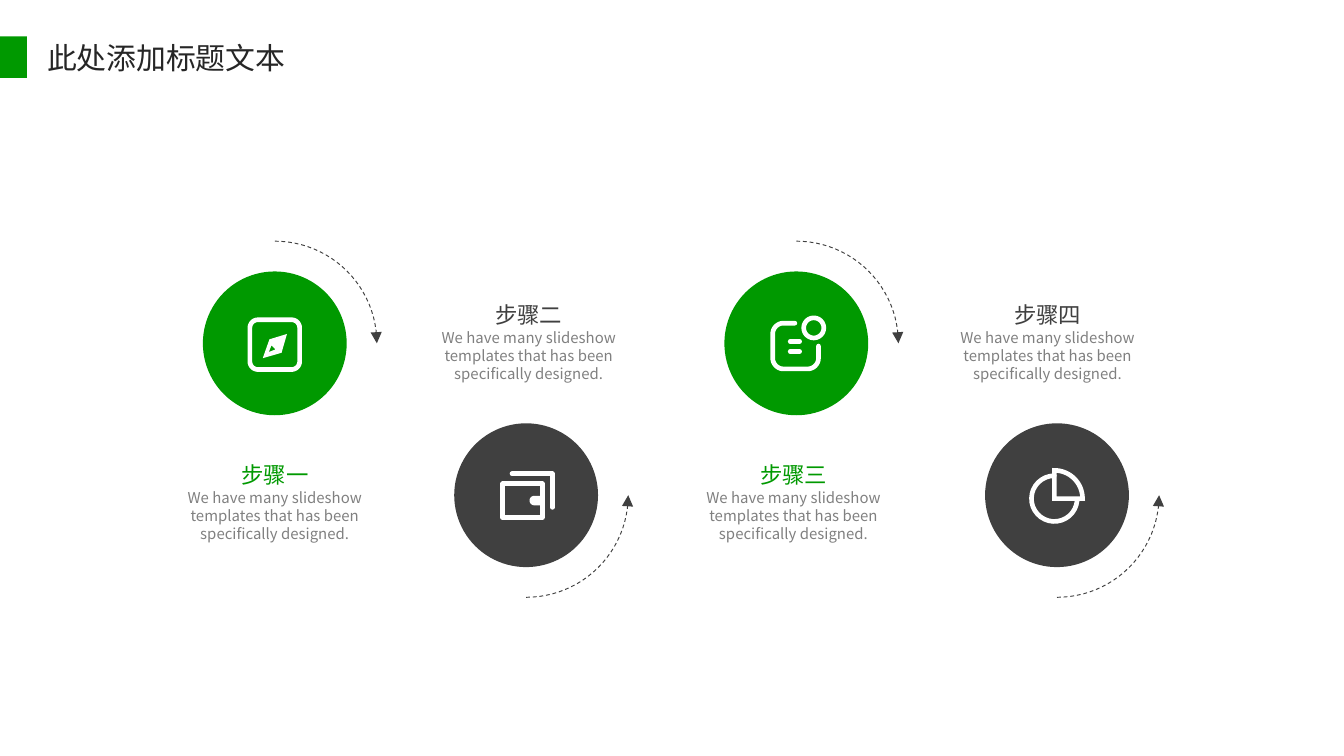
from math import cos, radians, sin

from pptx import Presentation
from pptx.dml.color import RGBColor
from pptx.enum.dml import MSO_LINE
from pptx.enum.shapes import MSO_SHAPE
from pptx.enum.text import MSO_ANCHOR, PP_ALIGN
from pptx.oxml.ns import qn
from pptx.util import Inches, Pt
from lxml.etree import SubElement

GREEN = RGBColor(0x00, 0x99, 0x00)
DARK = RGBColor(0x40, 0x40, 0x40)
GRAY = RGBColor(0x80, 0x80, 0x80)
INK = RGBColor(0x26, 0x26, 0x26)
WHITE = RGBColor(0xFF, 0xFF, 0xFF)
FONT = "Noto Sans CJK SC"


def arc(cx, cy, radius, start, end, steps=24):
    """Points along an arc; degrees run clockwise from the right."""
    angles = [radians(start + (end - start) * i / steps) for i in range(steps + 1)]
    return [(cx + radius * cos(a), cy + radius * sin(a)) for a in angles]


# Content
TITLE = "此处添加标题文本"
BODY = "We have many slideshow templates that has been specifically designed."

# Icon parts: (style, contours) in hundredths of an inch from the circle centre
COMPASS = [
    ("solid", [[(9, -7), (-4, -3), (-9, 11), (5, 7)],
               [(-4.5, 6.5), (-2.5, 1.5), (0.5, 4.5)]]),
    ("loop", [arc(-12.5, -11.5, 6, 180, 270) + arc(12.5, -11.5, 6, 270, 360)
              + arc(12.5, 13.5, 6, 0, 90) + arc(-12.5, 13.5, 6, 90, 180)]),
]
WALLET = [
    ("loop", [[(-17.5, -8.5), (12, -8.5), (12, 16.5), (-17.5, 16.5)]]),
    ("solid", [arc(6, 4, 3.5, 90, 270) + [(12, 0.5), (12, 7.5)]]),
    ("stroke", [[(-10.5, -16), (19.5, -16), (19.5, 9)]]),
]
NOTE = [
    ("stroke", [[(-1, -15)] + arc(-9.5, -7, 8, 270, 180) + arc(-9.5, 11, 8, 180, 90)
                + arc(8.5, 11, 8, 90, 0) + [(16.5, 2)]]),
    ("loop", [arc(13, -11.5, 7.5, 0, 360)]),
    ("stroke", [[(-4.5, -1.5), (2.5, -1.5)], [(-4.5, 6), (2.5, 6)]]),
]
PIE = [
    ("stroke", [arc(-2, 2.5, 17, 5, 270)]),
    ("sharp", [[(-2, 2.5)] + arc(-2, 2.5, 21, -90, 0)]),
]

# Heading, circle left, text left, icon
STEPS = [
    ("步骤一", 1.51, 1.22, COMPASS),
    ("步骤二", 3.38, 3.11, WALLET),
    ("步骤三", 5.39, 5.08, NOTE),
    ("步骤四", 7.33, 6.97, PIE),
]
DIAMETER, SWEEP = 1.07, 0.76
# Colour, circle top, text top, side of the arrow (-1 above, 1 below)
ROWS = [(GREEN, 2.02, 3.43, -1), (DARK, 3.15, 2.24, 1)]


def add_path(shapes, contours, cx, cy, unit=1.0, closed=False):
    pts = [[(Inches(cx + x * unit), Inches(cy + y * unit)) for x, y in c]
           for c in contours]
    builder = shapes.build_freeform(*pts[0][0], scale=1.0)
    for i, contour in enumerate(pts):
        if i:
            builder.move_to(*contour[0])
        builder.add_line_segments(contour[1:], close=closed)
    sp = builder.convert_to_shape()
    sp.shadow.inherit = False
    sp.fill.background()
    return sp


def set_line(sp, color, width, join="round", dash=None, arrow=False):
    sp.line.color.rgb = color
    sp.line.width = Pt(width)
    if dash:
        sp.line.dash_style = dash
    ln = sp.line._get_or_add_ln()
    if join == "round":
        ln.set("cap", "rnd" if not dash else "flat")
        SubElement(ln, qn("a:round"))
    else:
        SubElement(ln, qn("a:miter"), lim="800000")
    if arrow:
        SubElement(ln, qn("a:tailEnd"), type="triangle")


def add_icon(s, parts, cx, cy):
    shapes = s.shapes.add_group_shape().shapes if len(parts) > 2 else s.shapes
    for style, contours in parts:
        sp = add_path(shapes, contours, cx, cy, 0.01, style != "stroke")
        if style == "solid":
            sp.fill.solid()
            sp.fill.fore_color.rgb = WHITE
            sp.line.fill.background()
        else:
            set_line(sp, WHITE, 2.5, "miter" if style == "sharp" else "round")


def add_filled(s, kind, color, *box):
    sp = s.shapes.add_shape(kind, *map(Inches, box))
    sp.shadow.inherit = False
    sp.fill.solid()
    sp.fill.fore_color.rgb = color
    sp.line.fill.background()


def write(sp, lines, align, anchor):
    """Fill a frame with (text, size, colour) paragraphs."""
    tf = sp.text_frame
    frame = dict(word_wrap=True, vertical_anchor=anchor, margin_left=0,
                 margin_right=0, margin_top=0, margin_bottom=0)
    for name, value in frame.items():
        setattr(tf, name, value)
    for i, (text, size, color) in enumerate(lines):
        p = tf.paragraphs[0] if i == 0 else tf.add_paragraph()
        p.alignment, p.line_spacing = align, Pt(round(size * 1.21, 1))
        r = p.add_run()
        r.text = text
        for name, value in dict(name=FONT, size=Pt(size)).items():
            setattr(r.font, name, value)
        r.font.color.rgb = color
        SubElement(r.font._element, qn("a:ea"), typeface=FONT)


# Widescreen slide, 16:9
prs = Presentation()
prs.slide_width = Inches(10)
prs.slide_height = prs.slide_width * 9 // 16
s = prs.slides.add_slide(prs.slide_layouts[5])

# Title with its marker
add_filled(s, MSO_SHAPE.RECTANGLE, GREEN, 0, 0.27, 0.2, 0.31)
title = s.shapes.title
title.left, title.top, title.width, title.height = map(Inches, (0.35, 0.29, 3.04, 0.27))
write(title, [(TITLE, 16, INK)], PP_ALIGN.LEFT, MSO_ANCHOR.MIDDLE)

# Steps alternate between the upper and the lower row
for i, (heading, left, text_left, icon) in enumerate(STEPS):
    color, top, text_top, side = ROWS[i % 2]
    cx, cy = left + DIAMETER / 2, top + DIAMETER / 2
    add_filled(s, MSO_SHAPE.OVAL, color, left, top, DIAMETER, DIAMETER)
    arrow = add_path(s.shapes, [arc(0, 0, SWEEP, 90 * side, 0)], cx, cy)
    set_line(arrow, DARK, 0.5, dash=MSO_LINE.DASH, arrow=True)
    add_icon(s, icon, cx, cy)
    box = s.shapes.add_textbox(*map(Inches, (text_left, text_top, 1.65, 0.61)))
    write(box, [(heading, 12, color), (BODY, 8, GRAY)], PP_ALIGN.CENTER, MSO_ANCHOR.TOP)

prs.save("out.pptx")
